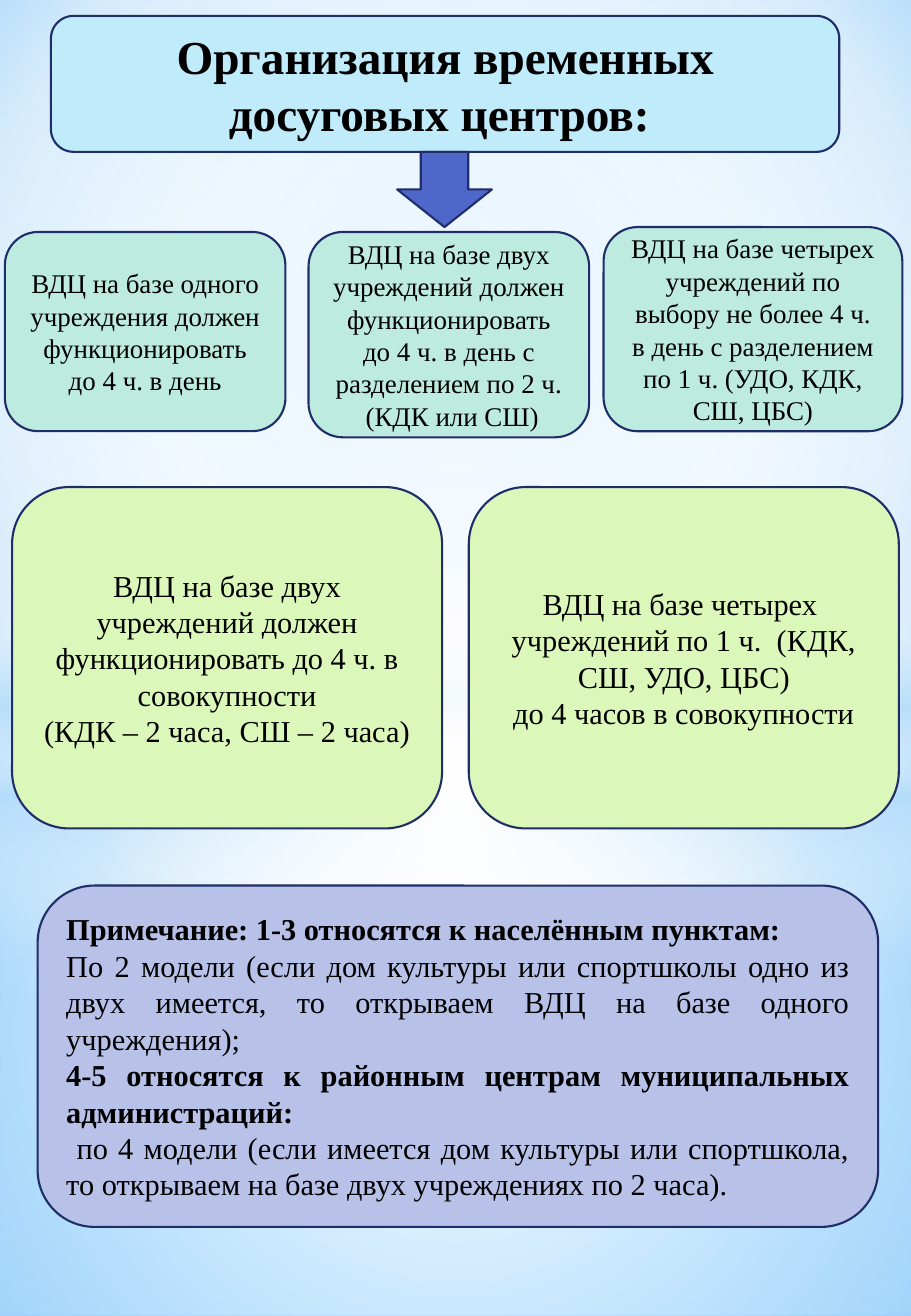
"""Builds a one-page chart on how temporary leisure centres are organised."""
from lxml import etree
from pptx import Presentation
from pptx import util as u
from pptx.dml.color import RGBColor
from pptx.enum import shapes, text
from pptx.oxml import ns

WIDE, HIGH = 540, 780
KIND = shapes.MSO_SHAPE
MID = (50, 50, 50, 50)


def hue(code):
    return RGBColor.from_string(code)


class Page:
    """Holds the style and the current slide."""

    font = "Times New Roman"
    ink = "000000"
    edge = "1F2E69"
    thick = 1.25

    def __init__(self, deck):
        self.slide = deck.slides.add_slide(deck.slide_layouts[6])

    def blend(self, fill, root, stops, rect=None):
        """Sets a round gradient, or a downward one when no rect is given."""
        fill.gradient()
        grad = root.xpath(".//a:gradFill")[0]
        for child in list(grad):
            grad.remove(child)
        add = lambda top, tag, **atts: etree.SubElement(top, ns.qn(tag), atts)
        group = add(grad, "a:gsLst")
        for pos, code, alpha in stops:
            stop = add(group, "a:gs", pos=str(pos * 1000))
            tint = add(stop, "a:srgbClr", val=code)
            if alpha < 100:
                add(tint, "a:alpha", val=str(alpha * 1000))
        if rect:
            ring = add(grad, "a:path", path="circle")
            sides = {side: str(part * 1000) for side, part in zip("ltrb", rect)}
            add(ring, "a:fillToRect", **sides)
        else:
            add(grad, "a:lin", ang="5400000", scaled="0")

    def back(self, stops, rect):
        self.blend(self.slide.background.fill, self.slide.element, stops, rect)

    def form(self, kind, box):
        shape = self.slide.shapes.add_shape(kind, *map(u.Pt, box))
        shape.shadow.inherit = False
        return shape

    def glow(self, kind, top, high, stops, rect=None):
        shape = self.form(kind, (0, top, WIDE, high))
        shape.line.fill.background()
        self.blend(shape.fill, shape.element, stops, rect)

    def solid(self, kind, box, fill):
        shape = self.form(kind, box)
        shape.fill.solid()
        shape.fill.fore_color.rgb = hue(fill)
        shape.line.color.rgb = hue(self.edge)
        shape.line.width = u.Pt(self.thick)
        return shape

    def card(self, box, fill, lines, size, bold=(), align=text.PP_ALIGN.CENTER):
        frame = self.solid(KIND.ROUNDED_RECTANGLE, box, fill).text_frame
        frame.word_wrap = True
        frame.vertical_anchor = text.MSO_ANCHOR.MIDDLE
        for num, line in enumerate(lines):
            para = frame.add_paragraph() if num else frame.paragraphs[0]
            para.alignment = align
            run = para.add_run()
            run.text = line
            run.font.name = self.font
            run.font.size = u.Pt(size)
            run.font.bold = num in bold
            run.font.color.rgb = hue(self.ink)


def main():
    deck = Presentation()
    deck.slide_width, deck.slide_height = u.Pt(WIDE), u.Pt(HIGH)
    page = Page(deck)

    page.back([(0, "9ED5FF", 100), (60, "FFFFFF", 100), (100, "5BB9FF", 100)],
              (20, 10, 20, 60))
    page.glow(KIND.RECTANGLE, 440, 340,
              [(0, "FFFFFF", 91), (37, "FFFFFF", 76), (100, "B4DCFA", 79)], MID)
    page.glow(KIND.RECTANGLE, 0, 440,
              [(0, "FFFFFF", 89), (48, "FFFFFF", 62), (100, "B4DCFA", 79)], MID)
    page.glow(KIND.RECTANGLE, 302, 260,
              [(0, "FFFFFF", 0), (29, "FFFFFF", 30), (45, "B4DCFA", 40),
               (55, "FFFFFF", 26), (65, "B4DCFA", 60), (100, "FFFFFF", 0)])
    page.glow(KIND.OVAL, 182, 580, [(0, "FFFFFF", 100), (54, "FFFFFF", 0)], MID)

    models = [
        ((2.9, 137.5, 166.3, 118.1),
         ["ВДЦ на базе одного учреждения должен функционировать до 4 ч. в день"]),
        ((182.9, 137.5, 166.3, 121.7),
         ["ВДЦ на базе двух учреждений должен функционировать до 4 ч. в день "
          "с разделением по 2 ч.", " (КДК или СШ)"]),
        ((357.8, 134.6, 177.1, 121),
         ["ВДЦ на базе четырех учреждений по выбору не более 4 ч. в день "
          "с разделением по 1 ч. (УДО, КДК, СШ, ЦБС)"]),
    ]
    for box, lines in models:
        page.card(box, "BEEBDF", lines, 16)

    totals = [
        ["ВДЦ на базе двух учреждений должен функционировать до 4 ч. "
         "в совокупности", "(КДК – 2 часа, СШ – 2 часа)"],
        ["ВДЦ на базе четырех  учреждений по 1 ч.  (КДК, СШ, УДО, ЦБС)",
         "до 4 часов в совокупности"],
    ]
    for col, lines in enumerate(totals):
        page.card((7.2 + col * 270.7, 288.7, 254.9, 202.3), "DCF7BA", lines, 18)

    page.card((30.2, 9.4, 467.3, 80.6), "BFEBFA",
              ["Организация временных досуговых центров: "], 28, bold=(0,))
    page.solid(KIND.DOWN_ARROW, (235.4, 90, 56.2, 44.6), "4E67C8")

    note = [
        "Примечание: 1-3 относятся к населённым пунктам: ",
        "По 2 модели (если дом культуры или спортшколы одно из двух имеется, "
        "то открываем ВДЦ на базе одного учреждения);",
        "4-5 относятся к районным центрам муниципальных администраций: ",
        " по 4 модели (если имеется дом культуры или спортшкола, "
        "то открываем на базе двух учреждениях по 2 часа).",
    ]
    page.card((22.3, 524.9, 498.2, 202.3), "B8C2E9", note, 18,
              bold=(0, 2), align=text.PP_ALIGN.JUSTIFY)
    deck.save("out.pptx")


if __name__ == "__main__":
    main()
